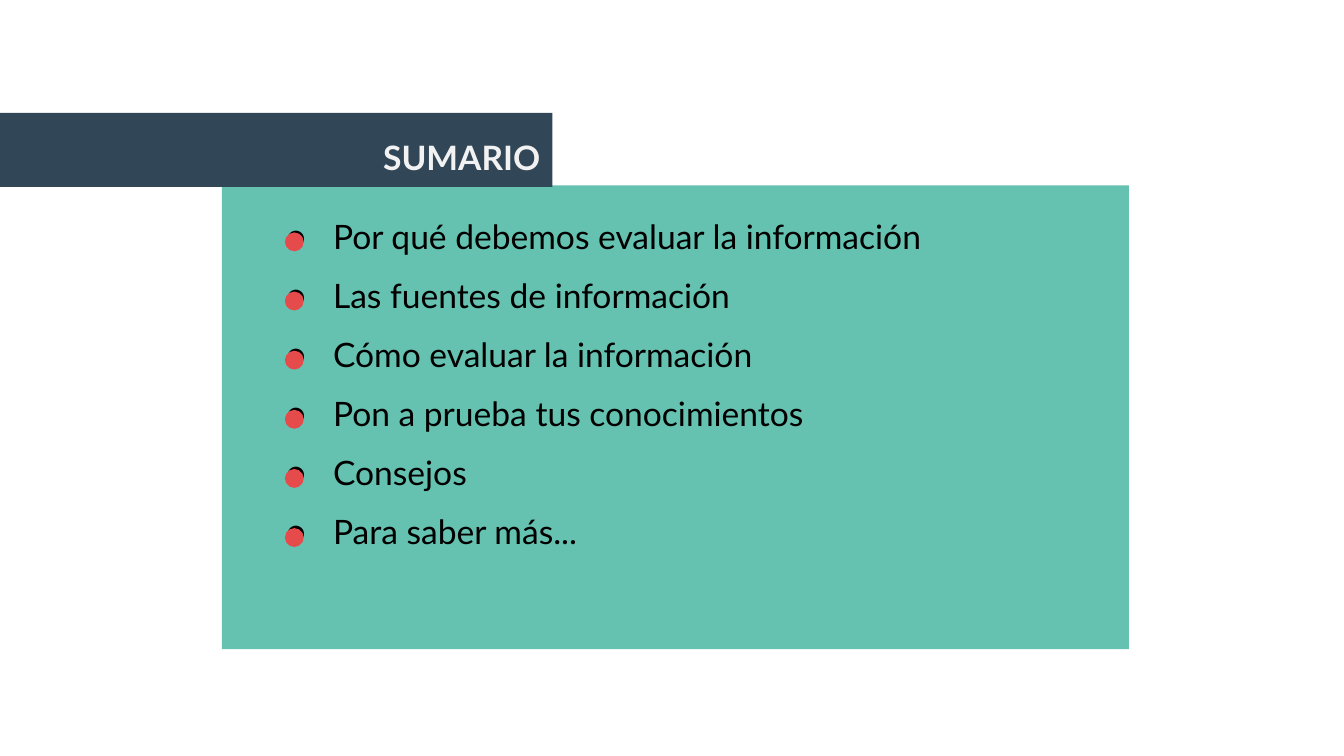
from lxml.etree import SubElement
from pptx import Presentation
from pptx.dml.color import RGBColor
from pptx.enum.shapes import MSO_SHAPE
from pptx.enum.text import MSO_ANCHOR, MSO_AUTO_SIZE, PP_ALIGN
from pptx.oxml.ns import qn
from pptx.util import Inches, Pt

COLORS = {
    "panel": "65C1B0",
    "banner": "314656",
    "title": "F2F2F2",
    "text": "000000",
    "marker": "E54B4A",
}
FONT = "Lato"
TOPICS = [
    "Por qué debemos evaluar la información",
    "Las fuentes de información",
    "Cómo evaluar la información",
    "Pon a prueba tus conocimientos",
    "Consejos",
    "Para saber más...",
]
MARKER_TOP = 1.73
MARKER_STEP = 0.44


def add_filled_shape(slide, kind, left, top, width, height, color):
    shape = slide.shapes.add_shape(
        kind, Inches(left), Inches(top), Inches(width), Inches(height)
    )
    shape.shadow.inherit = False
    shape.fill.solid()
    shape.fill.fore_color.rgb = RGBColor.from_string(COLORS[color])
    shape.line.fill.background()


def prepare_frame(shape):
    frame = shape.text_frame
    frame.word_wrap = True
    frame.auto_size = MSO_AUTO_SIZE.NONE
    frame.vertical_anchor = MSO_ANCHOR.TOP
    frame.margin_left = frame.margin_right = Inches(0.1)
    frame.margin_top = frame.margin_bottom = Inches(0.1)
    return frame


def add_run(paragraph, text, color, bold=False):
    run = paragraph.add_run()
    run.text = text
    run.font.name = FONT
    run.font.size = Pt(18)
    run.font.bold = bold
    run.font.color.rgb = RGBColor.from_string(COLORS[color])


def set_title(slide, text):
    title = slide.shapes.title
    title.left, title.top = Inches(1.8), Inches(0.92)
    title.width, title.height = Inches(2.32), Inches(0.36)
    paragraph = prepare_frame(title).paragraphs[0]
    paragraph.alignment = PP_ALIGN.RIGHT
    add_run(paragraph, text, "title", bold=True)
    title.element.getparent().append(title.element)


def set_bullet(paragraph):
    properties = paragraph._p.get_or_add_pPr()
    properties.set("marL", str(Inches(0.5)))
    properties.set("indent", str(Inches(-0.35)))
    bullet_color = SubElement(properties, qn("a:buClr"))
    SubElement(bullet_color, qn("a:srgbClr"), val=COLORS["text"])
    SubElement(properties, qn("a:buFont"), typeface=FONT)
    SubElement(properties, qn("a:buChar"), char="●")


def add_topics(slide, topics):
    box = slide.shapes.add_textbox(
        Inches(1.88), Inches(1.51), Inches(6.34), Inches(3.31)
    )
    frame = prepare_frame(box)
    for index, topic in enumerate(topics):
        paragraph = frame.add_paragraph() if index else frame.paragraphs[0]
        paragraph.space_before = Pt(10 if index else 0)
        set_bullet(paragraph)
        add_run(paragraph, topic, "text")
    paragraph.space_after = Pt(10)


def main():
    presentation = Presentation()
    presentation.slide_width = Inches(10)
    presentation.slide_height = Inches(10) * 9 // 16
    slide = presentation.slides.add_slide(presentation.slide_layouts[5])
    add_filled_shape(slide, MSO_SHAPE.RECTANGLE, 1.65, 1.38, 6.75, 3.45, "panel")
    add_filled_shape(slide, MSO_SHAPE.RECTANGLE, 0, 0.84, 4.11, 0.55, "banner")
    set_title(slide, "SUMARIO")
    add_topics(slide, TOPICS)
    for index in range(len(TOPICS)):
        top = MARKER_TOP + index * MARKER_STEP
        add_filled_shape(slide, MSO_SHAPE.OVAL, 2.12, top, 0.14, 0.14, "marker")
    presentation.save("out.pptx")


if __name__ == "__main__":
    main()
